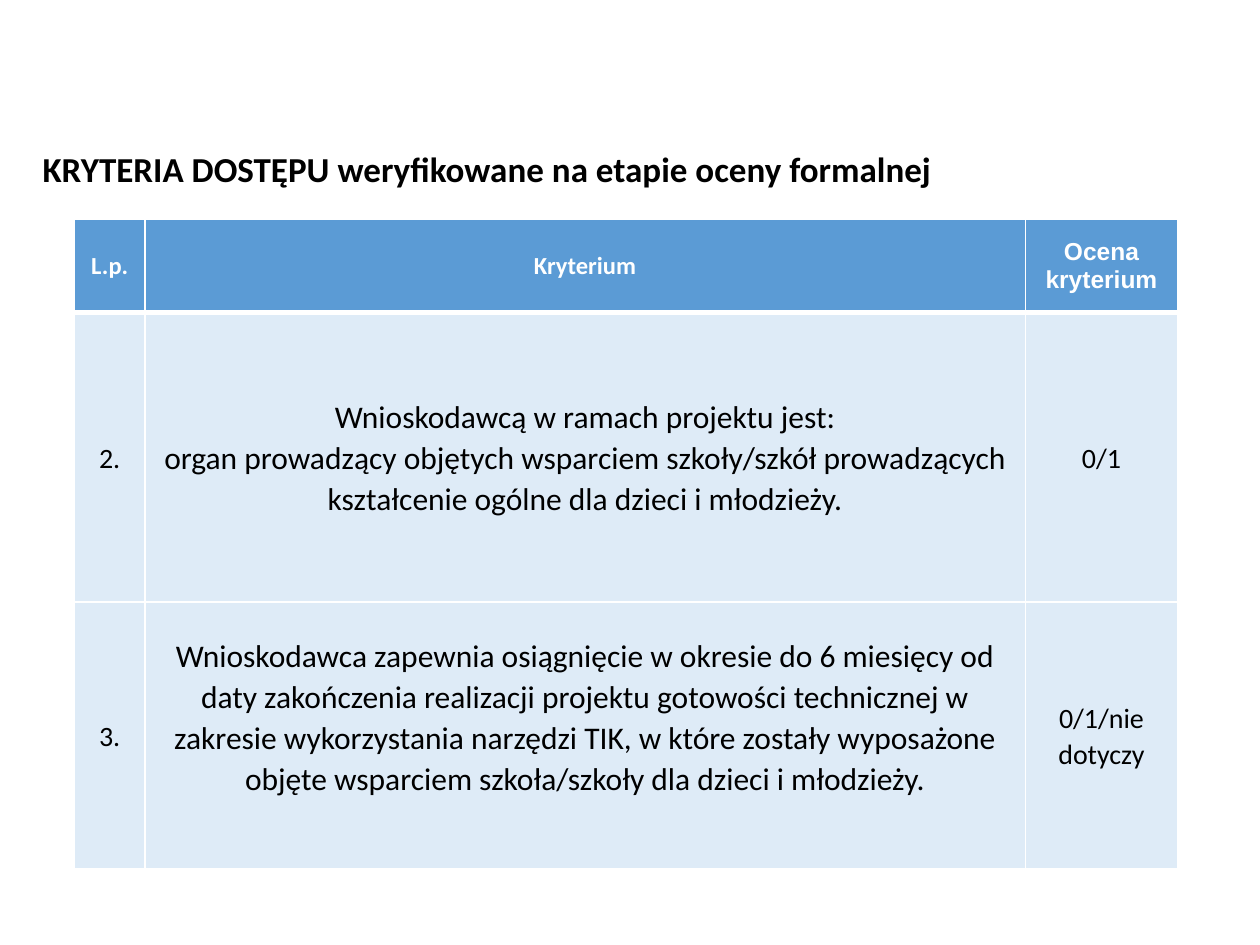
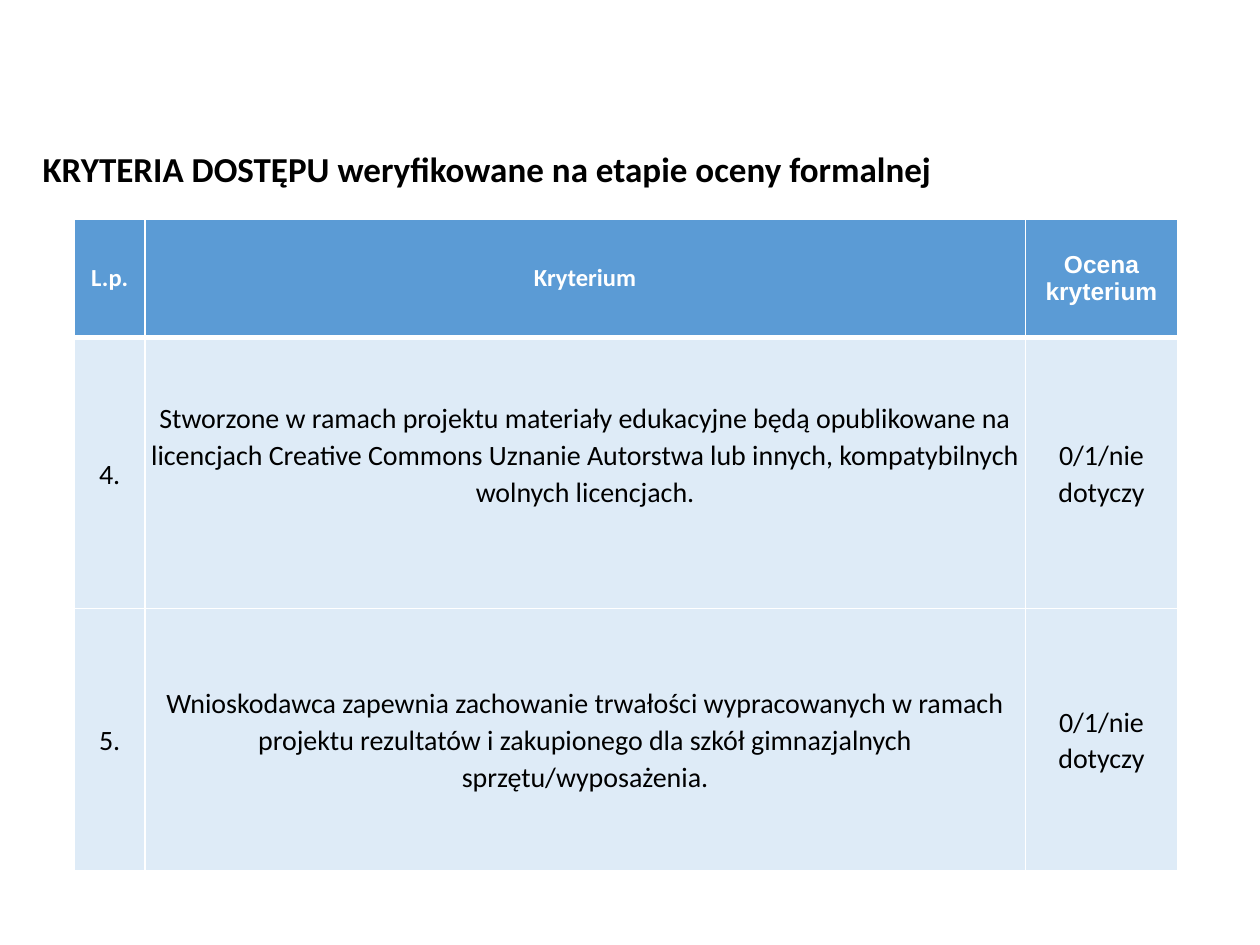
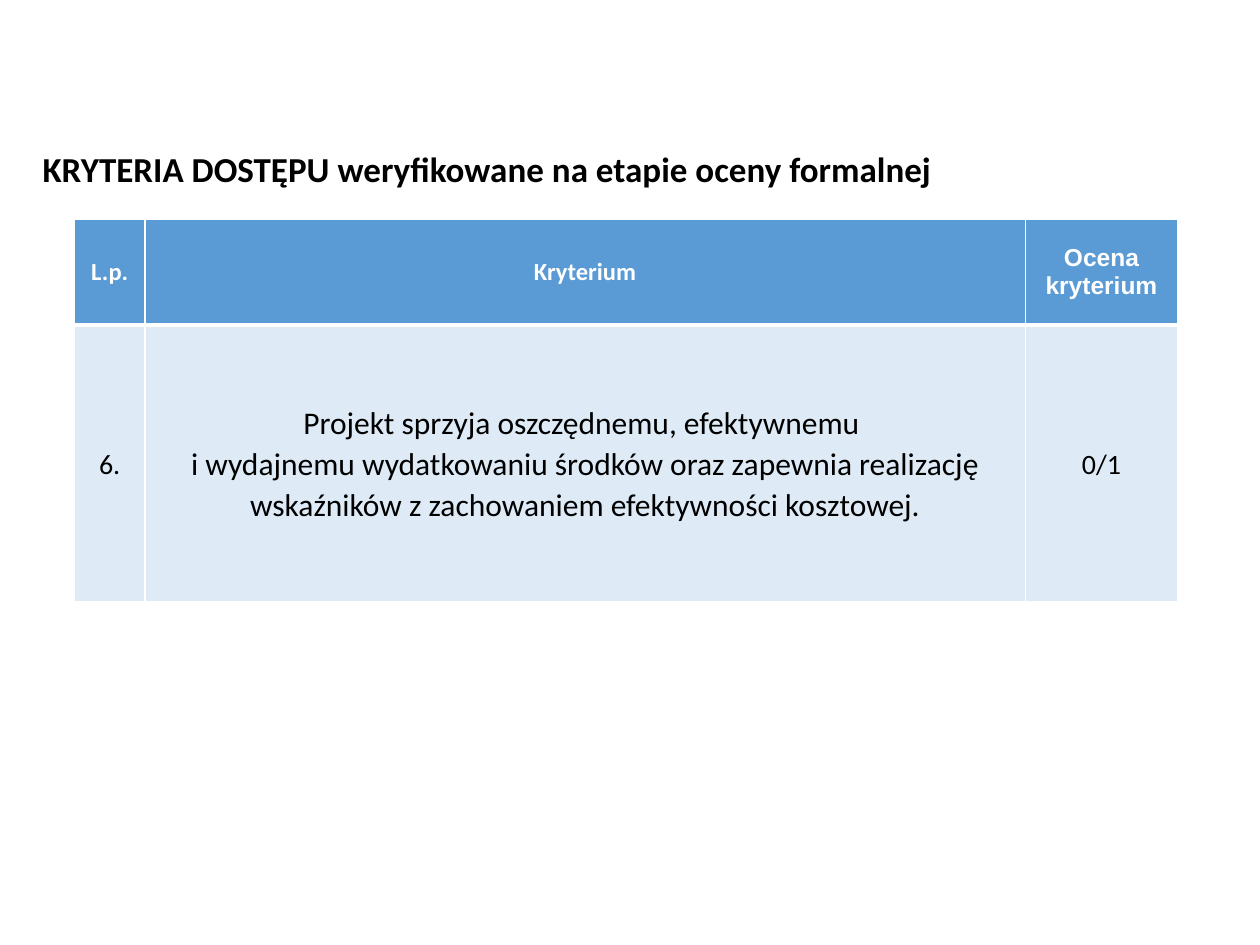
from dataclasses import dataclass

from lxml import etree
from pptx import Presentation
from pptx.dml.color import RGBColor
from pptx.enum.text import MSO_ANCHOR, MSO_AUTO_SIZE, PP_ALIGN
from pptx.oxml.ns import qn
from pptx.presentation import Presentation as PresentationType
from pptx.slide import Slide
from pptx.table import _Cell
from pptx.text.text import _Paragraph
from pptx.util import Cm, Pt

MIDDLE = MSO_ANCHOR.MIDDLE
FIT_SHAPE = MSO_AUTO_SIZE.SHAPE_TO_FIT_TEXT
CENTER = PP_ALIGN.CENTER

BLACK = "000000"
WHITE = "FFFFFF"
HEADER_BLUE = "5B9BD5"
BODY_BLUE = "DEEBF7"
BODY_FONT = "Calibri"

TITLE = "KRYTERIA DOSTĘPU weryfikowane na etapie oceny formalnej"
HEADERS = (("L.p.", BODY_FONT), ("Kryterium", BODY_FONT), ("Ocena kryterium", "Arial"))
COLUMN_WIDTHS = (1.42, 17.75, 3.07)
CELL_INSET = 0.1
THIN_BORDER = 1
THICK_BORDER = 3


@dataclass(frozen=True)
class Criterion:
    """One criterion row of a table, with lengths in centimetres."""

    number: str
    description: str
    score: str
    height: float
    size: int = 18
    bottom_inset: float = CELL_INSET


@dataclass(frozen=True)
class CriteriaPage:
    """The header height and the criteria of one slide."""

    header_height: float
    criteria: tuple[Criterion, ...]


PAGES = (
    CriteriaPage(1.88, (
        Criterion(
            "2.",
            "Wnioskodawcą w ramach projektu jest:\n"
            "organ prowadzący objętych wsparciem szkoły/szkół prowadzących "
            "kształcenie ogólne dla dzieci i młodzieży.",
            "0/1", 5.84,
        ),
        Criterion(
            "3.",
            "Wnioskodawca zapewnia osiągnięcie w okresie do 6 miesięcy od daty "
            "zakończenia realizacji projektu gotowości technicznej w zakresie "
            "wykorzystania narzędzi TIK, w które zostały wyposażone objęte "
            "wsparciem szkoła/szkoły dla dzieci i młodzieży.",
            "0/1/nie dotyczy", 5.38, bottom_inset=0.85,
        ),
    )),
    CriteriaPage(2.39, (
        Criterion(
            "4.",
            "Stworzone w ramach projektu materiały edukacyjne będą opublikowane "
            "na licencjach Creative Commons Uznanie Autorstwa lub innych, "
            "kompatybilnych wolnych licencjach.",
            "0/1/nie dotyczy", 5.46, size=16, bottom_inset=0.85,
        ),
        Criterion(
            "5.",
            "Wnioskodawca zapewnia zachowanie trwałości wypracowanych w ramach "
            "projektu rezultatów i zakupionego dla szkół gimnazjalnych "
            "sprzętu/wyposażenia.",
            "0/1/nie dotyczy", 5.28, size=16,
        ),
    )),
    CriteriaPage(2.13, (
        Criterion(
            "6.",
            "Projekt sprzyja oszczędnemu, efektywnemu \n"
            "i wydajnemu wydatkowaniu środków oraz zapewnia realizację "
            "wskaźników z zachowaniem efektywności kosztowej.",
            "0/1", 5.59,
        ),
    )),
)


def color(value: str) -> RGBColor:
    """Turn a hex string into a colour."""
    return RGBColor.from_string(value)


def write(paragraph: _Paragraph, text: str, size: int, font: str = BODY_FONT,
          text_color: str = BLACK, bold: bool = False) -> None:
    """Fill a paragraph and format its runs."""
    paragraph.text = text
    for run in paragraph.runs:
        run.font.size = Pt(size)
        run.font.name = font
        run.font.bold = bold
        run.font.color.rgb = color(text_color)


def style_cell(cell: _Cell, fill: str, top: int, bottom: int) -> None:
    """Give a cell white borders, a fill and centred text."""
    properties = cell._tc.get_or_add_tcPr()
    borders = {"lnL": THIN_BORDER, "lnR": THIN_BORDER, "lnT": top, "lnB": bottom}
    for tag, width in borders.items():
        line = etree.SubElement(properties, qn(f"a:{tag}"), w=str(Pt(width)))
        solid = etree.SubElement(line, qn("a:solidFill"))
        etree.SubElement(solid, qn("a:srgbClr"), val=WHITE)
    cell.fill.solid()
    cell.fill.fore_color.rgb = color(fill)
    cell.vertical_anchor = MIDDLE
    cell.text_frame.paragraphs[0].alignment = CENTER


def set_insets(cell: _Cell, bottom: float = CELL_INSET) -> None:
    """Set narrow insets, with a bottom inset of its own."""
    cell.margin_left = cell.margin_right = cell.margin_top = Cm(CELL_INSET)
    cell.margin_bottom = Cm(bottom)


def add_title(slide: Slide) -> None:
    """Add the title that all slides share."""
    shape = slide.shapes.add_textbox(Cm(0.61), Cm(2.84), Cm(23.14), Cm(1.12))
    text_frame = shape.text_frame
    text_frame.word_wrap = True
    text_frame.auto_size = FIT_SHAPE
    text_frame.vertical_anchor = MIDDLE
    write(text_frame.paragraphs[0], TITLE, 20, bold=True)


def add_criteria_table(slide: Slide, page: CriteriaPage) -> None:
    """Add the table of criteria of one slide."""
    heights = [page.header_height, *(item.height for item in page.criteria)]
    table = slide.shapes.add_table(
        len(heights), len(COLUMN_WIDTHS), Cm(1.5), Cm(4.42),
        Cm(sum(COLUMN_WIDTHS)), Cm(sum(heights)),
    ).table
    for column, width in zip(table.columns, COLUMN_WIDTHS):
        column.width = Cm(width)
    for row, height in zip(table.rows, heights):
        row.height = Cm(height)

    for cell, (label, font) in zip(table.rows[0].cells, HEADERS):
        style_cell(cell, HEADER_BLUE, THIN_BORDER, THICK_BORDER)
        write(cell.text_frame.paragraphs[0], label, 14, font, WHITE, True)

    for row_index, item in enumerate(page.criteria, start=1):
        top = THICK_BORDER if row_index == 1 else THIN_BORDER
        cells = list(table.rows[row_index].cells)
        texts = ((item.number, 16), (item.description, item.size), (item.score, 16))
        for cell, (text, size) in zip(cells, texts):
            style_cell(cell, BODY_BLUE, top, THIN_BORDER)
            paragraph = cell.text_frame.paragraphs[0]
            paragraph.line_spacing = 1.07
            write(paragraph, text, size)
        set_insets(cells[1], item.bottom_inset)
        set_insets(cells[2])


def build_presentation() -> PresentationType:
    """Build all slides."""
    presentation = Presentation()
    presentation.slide_width = Cm(25.4)
    presentation.slide_height = Cm(19.05)
    for page in PAGES:
        slide = presentation.slides.add_slide(presentation.slide_layouts[6])
        add_criteria_table(slide, page)
        add_title(slide)
    return presentation


if __name__ == "__main__":
    build_presentation().save("out.pptx")
